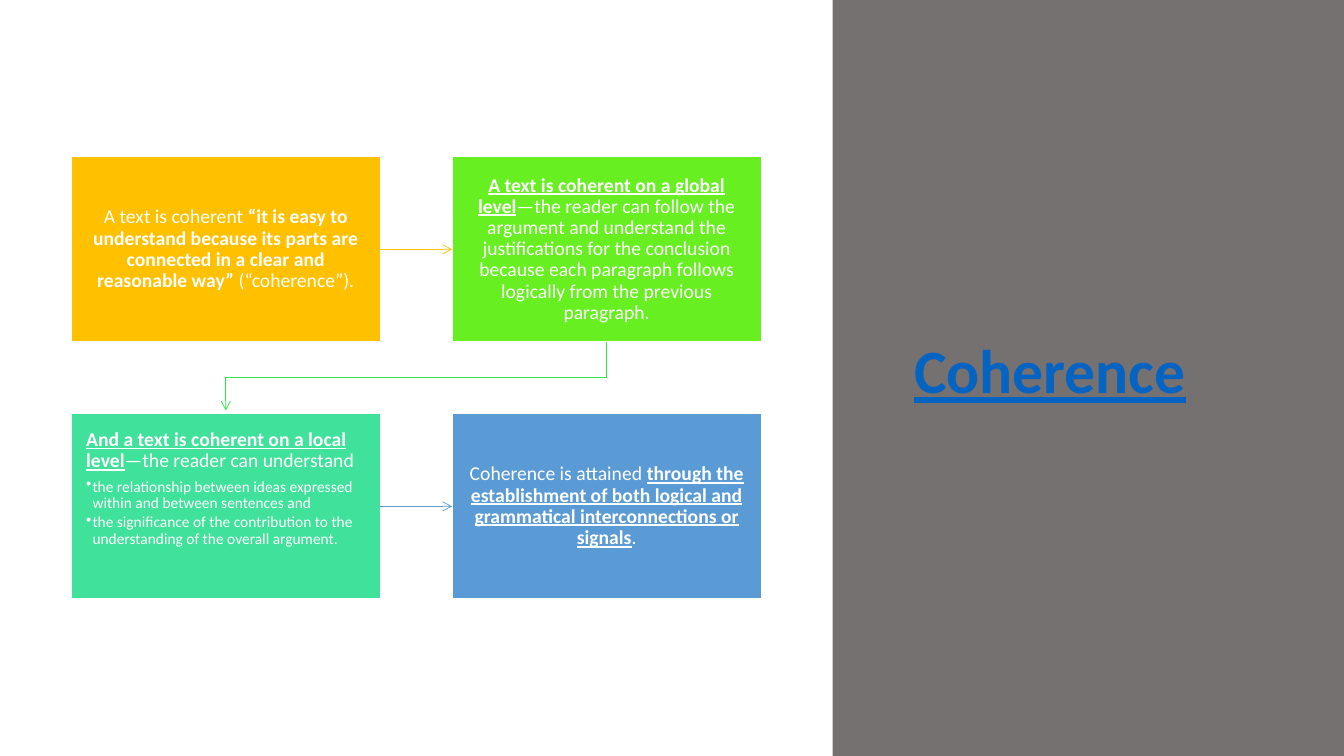
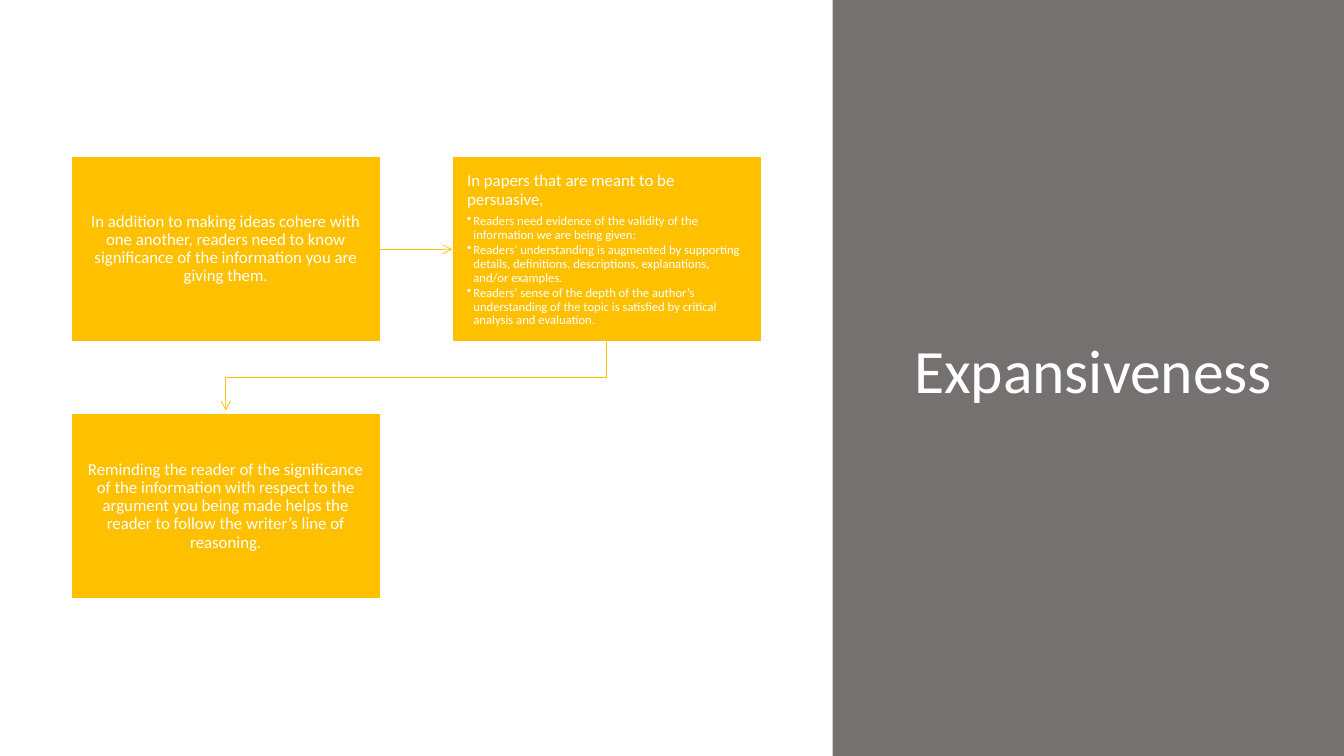
"""Build two slides that explain coherence and expansiveness as short step flows."""
import pptx
import pptx.dml.color
import pptx.enum.shapes
import pptx.enum.text
import pptx.oxml
import pptx.oxml.ns
import pptx.util

Pt = pptx.util.Pt
ALIGN = pptx.enum.text.PP_ALIGN
ANCHOR = pptx.enum.text.MSO_ANCHOR

FONT = "Calibri"
WHITE, PANEL, LINK = "FFFFFF", "767171", "0563C1"
GOLD, LIME, MINT, BLUE, GREEN = "FFC000", "67EF21", "3FE19B", "5B9BD5", "30E845"

SLIDE_W, SLIDE_H = 960, 540
PANEL_LEFT = 594.8
TITLE_BOX = (645.8, 50.4, 288.7, 433.4)
STEP_LEFT, STEP_TOP, STEP_W, STEP_H = 50.8, 111.8, 221, 132.6
PITCH_X, PITCH_Y, COLUMNS = 272.1, 183.6, 2
ARROW_GAP, BULLET_INDENT = 2.2, 4.5

SLIDES = [
    {
        "title": ("Coherence", "bu", LINK),
        "sizes": (14, 11),
        "arrows": [GOLD, GREEN, BLUE],
        "steps": [
            (GOLD, [("A text is coherent ", ""),
                    ("“it is easy to understand because its parts are connected "
                     "in a clear and reasonable way” ", "b"),
                    ("(“coherence”).", "")], []),
            (LIME, [("A text is coherent on a global level", "bu"),
                    ("—the reader can follow the argument and understand the "
                     "justifications for the conclusion because each paragraph "
                     "follows logically from the previous paragraph.", "")], []),
            (MINT, [("And a text is coherent on a local level", "bu"),
                    ("—the reader can understand", "")],
             ["the relationship between ideas expressed within and between "
              "sentences and",
              "the significance of the contribution to the understanding of the "
              "overall argument."]),
            (BLUE, [("Coherence is attained ", ""),
                    ("through the establishment of both logical and grammatical "
                     "interconnections or signals", "bu"),
                    (".", "")], []),
        ],
    },
    {
        "title": ("Expansiveness", "", WHITE),
        "sizes": (12, 9),
        "arrows": [GOLD, GOLD],
        "steps": [
            (GOLD, [("In addition to making ideas cohere with one another, readers "
                     "need to know significance of the information you are giving "
                     "them.", "")], []),
            (GOLD, [("In papers that are meant to be persuasive,", "")],
             ["Readers need evidence of the validity of the information we are "
              "being given;",
              "Readers’ understanding is augmented by supporting details, "
              "definitions, descriptions, explanations, and/or examples.",
              "Readers’ sense of the depth of the author’s understanding of the "
              "topic is satisfied by critical analysis and evaluation."]),
            (GOLD, [("Reminding the reader of the significance of the information "
                     "with respect to the argument you being made helps the reader "
                     "to follow the writer’s line of reasoning.", "")], []),
        ],
    },
]


def rgb(value):
    return pptx.dml.color.RGBColor.from_string(value)


def add_child(parent, tag, **attributes):
    child = pptx.oxml.parse_xml(f"<a:{tag} {pptx.oxml.ns.nsdecls('a')}/>")
    for key, value in attributes.items():
        child.set(key, value)
    parent.append(child)


def add_run(paragraph, text, size, style="", color=WHITE):
    run = paragraph.add_run()
    run.text = text
    run.font.name, run.font.size = FONT, Pt(size)
    run.font.bold, run.font.underline = "b" in style, "u" in style
    run.font.color.rgb = rgb(color)


def add_rectangle(slide, left, top, width, height, color):
    rectangle = slide.shapes.add_shape(
        pptx.enum.shapes.MSO_SHAPE.RECTANGLE, Pt(left), Pt(top), Pt(width), Pt(height))
    rectangle.shadow.inherit = False
    rectangle.fill.solid()
    rectangle.fill.fore_color.rgb = rgb(color)
    rectangle.line.fill.background()
    return rectangle


def add_title(slide, text, style, color):
    add_rectangle(slide, PANEL_LEFT, 0, SLIDE_W - PANEL_LEFT, SLIDE_H, PANEL)
    frame = slide.shapes.add_textbox(*map(Pt, TITLE_BOX)).text_frame
    frame.word_wrap = True
    frame.vertical_anchor = ANCHOR.MIDDLE
    frame.paragraphs[0].line_spacing = 0.9
    add_run(frame.paragraphs[0], text, 44, style, color)


def add_bullet(frame, text, size):
    paragraph = frame.add_paragraph()
    paragraph.level = 1
    paragraph.alignment = ALIGN.LEFT
    paragraph.line_spacing, paragraph.space_after = 0.9, Pt(size * 0.15)
    properties = paragraph._p.get_or_add_pPr()
    properties.set("marL", str(Pt(BULLET_INDENT)))
    properties.set("indent", str(-Pt(BULLET_INDENT)))
    add_child(properties, "buChar", char="•")
    add_run(paragraph, text, size)


def add_step(slide, index, step, sizes):
    color, lead, bullets = step
    row, column = divmod(index, COLUMNS)
    box = add_rectangle(slide, STEP_LEFT + column * PITCH_X,
                        STEP_TOP + row * PITCH_Y, STEP_W, STEP_H, color)
    box.line.color.rgb, box.line.width = rgb(WHITE), Pt(1)
    frame = box.text_frame
    frame.word_wrap = True
    frame.margin_left = frame.margin_right = Pt(10.8)
    frame.margin_top = frame.margin_bottom = Pt(11.4)
    frame.vertical_anchor = ANCHOR.TOP if bullets else ANCHOR.MIDDLE
    paragraph = frame.paragraphs[0]
    paragraph.alignment = ALIGN.LEFT if bullets else ALIGN.CENTER
    paragraph.line_spacing, paragraph.space_after = 0.9, Pt(sizes[0] * 0.35)
    for text, style in lead:
        add_run(paragraph, text, sizes[0], style)
    for text in bullets:
        add_bullet(frame, text, sizes[1])
    return box


def add_straight(slide, start, end):
    arrow = slide.shapes.add_connector(pptx.enum.shapes.MSO_CONNECTOR.STRAIGHT, 0, 0, 0, 0)
    arrow.begin_connect(start, 3)
    arrow.end_connect(end, 1)
    return arrow


def add_bent(slide, start, end):
    start_x, end_x = start.left + start.width // 2, end.left + end.width // 2
    start_y = start.top + start.height
    middle_y = (start_y + end.top) // 2
    builder = slide.shapes.build_freeform(start_x, start_y)
    builder.add_line_segments(
        [(start_x, middle_y), (end_x, middle_y), (end_x, end.top - Pt(ARROW_GAP))],
        close=False)
    arrow = builder.convert_to_shape()
    arrow.shadow.inherit = False
    arrow.fill.background()
    return arrow


def add_arrow(slide, start, end, color):
    arrow = (add_straight if start.top == end.top else add_bent)(slide, start, end)
    arrow.line.color.rgb, arrow.line.width = rgb(color), Pt(0.5)
    add_child(arrow.line._get_or_add_ln(), "tailEnd", type="arrow")
    if start.top == end.top:
        add_child(arrow._element.spPr, "effectLst")


def main():
    deck = pptx.Presentation()
    deck.slide_width, deck.slide_height = Pt(SLIDE_W), Pt(SLIDE_H)
    for content in SLIDES:
        slide = deck.slides.add_slide(deck.slide_layouts[6])
        add_title(slide, *content["title"])
        steps = [add_step(slide, index, step, content["sizes"])
                 for index, step in enumerate(content["steps"])]
        for start, end, color in zip(steps, steps[1:], content["arrows"]):
            add_arrow(slide, start, end, color)
    deck.save("out.pptx")


if __name__ == "__main__":
    main()
